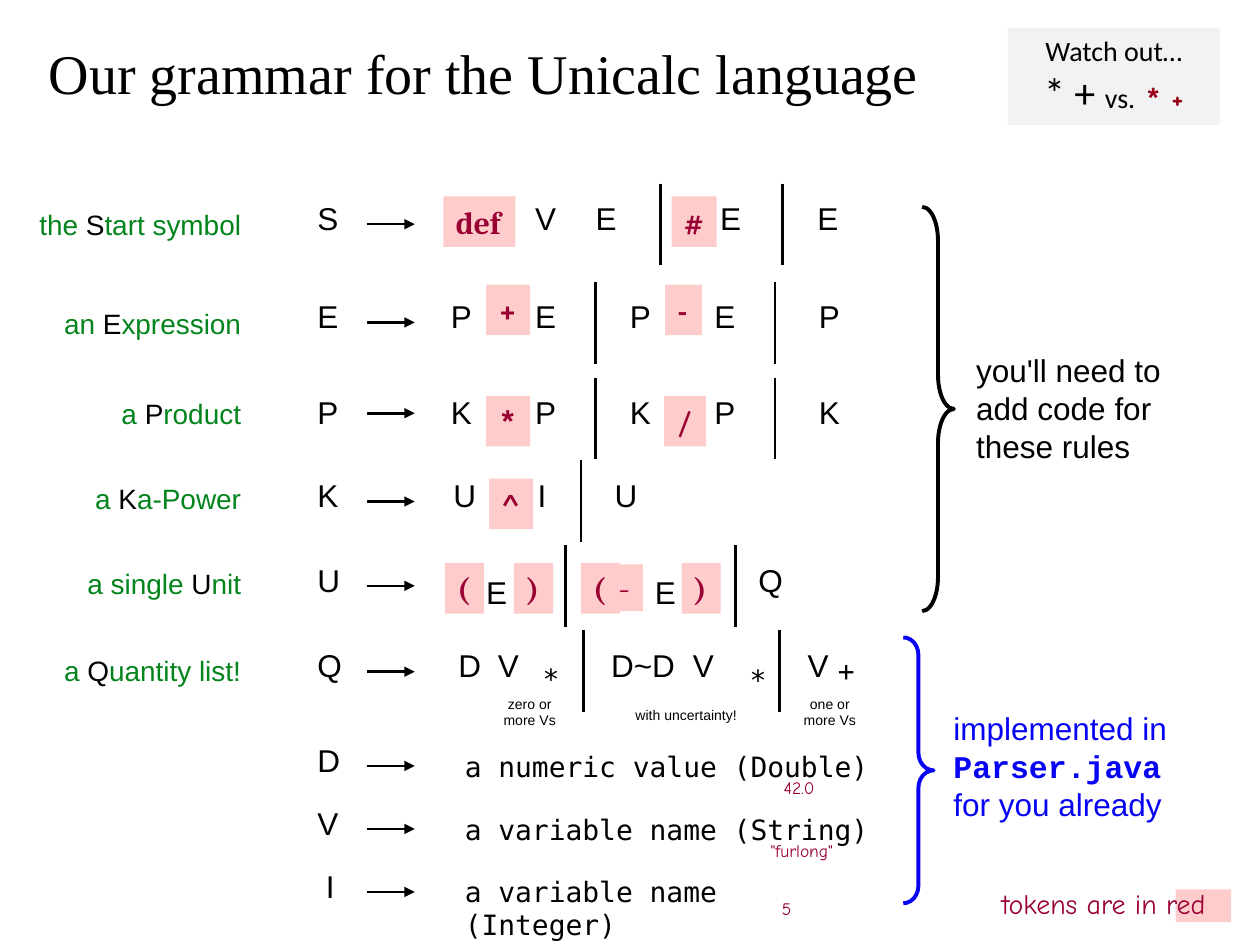
from lxml import etree
from pptx import Presentation
from pptx import util as u
from pptx.dml.color import RGBColor
from pptx.enum import shapes, text
from pptx.oxml.ns import qn

INK, RED, PINK, GREEN, BLUE = "000000", "990033", "FFCCCC", "04841C", "0703F3"
SANS, MONO, COMIC = "Arial", "DejaVu Sans Mono", "Comic Neue"
LEFT, MID, RIGHT = text.PP_ALIGN.LEFT, text.PP_ALIGN.CENTER, text.PP_ALIGN.RIGHT

deck = Presentation()
deck.slide_width, deck.slide_height = u.Cm(25.4), u.Cm(19.05)
page = deck.slides.add_slide(deck.slide_layouts[6])


def put(x, y, w, h, runs, align=LEFT, wrap=False, fill=None):
    """Add a text box, or a filled box; a run is (text, size, font, colour, bold).

    A run that is None starts a new paragraph.
    """
    area = [u.Cm(n) for n in (x, y, w, h)]
    if fill:
        box = page.shapes.add_shape(shapes.MSO_SHAPE.RECTANGLE, *area)
        box.shadow.inherit = False
        box.fill.solid()
        box.fill.fore_color.rgb = RGBColor.from_string(fill)
        box.line.fill.background()
    else:
        box = page.shapes.add_textbox(*area)
    frame = box.text_frame
    frame.word_wrap = wrap
    frame.vertical_anchor = text.MSO_ANCHOR.TOP
    para = frame.paragraphs[0]
    para.alignment = align
    for item in runs:
        if item is None:
            para = frame.add_paragraph()
            para.alignment = align
            continue
        words, size, face, ink, bold = item
        run = para.add_run()
        run.text = words
        run.font.size = u.Pt(size)
        run.font.name = face
        run.font.bold = bold
        run.font.color.rgb = RGBColor.from_string(ink)
    return box


def rule(x1, y1, x2, y2, arrow=False):
    line = page.shapes.add_connector(
        shapes.MSO_CONNECTOR.STRAIGHT, *[u.Cm(n) for n in (x1, y1, x2, y2)])
    line.line.width = u.Pt(1.5)
    line.line.color.rgb = RGBColor.from_string(INK)
    if arrow:
        etree.SubElement(line.line._get_or_add_ln(), qn("a:tailEnd"), type="triangle")
    etree.SubElement(line._element.spPr, qn("a:effectLst"))


# Title, red swatch and warning box
put(23.7, 17.93, 1.12, 0.66, [], fill=PINK)
put(0.41, 0.66, 18.69, 1.63,
    [("Our grammar for the Unicalc language", 32, "Times New Roman", INK, False)],
    MID, True)
warn = put(20.32, 0.56, 4.27, 1.96, [
    ("Watch out…", 16, "Calibri", INK, False), None,
    ("* + ", 24, "Calibri", INK, False), ("vs.", 16, "Calibri", INK, False),
    (" ", 24, "Calibri", INK, False), ("*", 16, "Courier New", "960117", True),
    (" +", 16, COMIC, "960117", True)], MID, True, "F2F2F2")
last = warn.text_frame.paragraphs[1]
last.line_spacing = 0.5
last.space_before = u.Pt(12)

# Rules: symbol, letter top, arrow height, label top, label parts, bars, letters
rows = [
    ("S", 3.89, 4.52, 4.06, ("the ", "S", "tart symbol"), (13.31, 15.77),
     [("V", 10.54), ("E", 11.76), ("E", 14.27), ("E", 16.23)]),
    ("E", 5.87, 6.5, 6.05, ("an ", "E", "xpression"), (12.01, 15.62),
     [("P", 8.84), ("E", 10.54), ("P", 12.45), ("E", 14.15), ("P", 16.26)]),
    ("P", 7.8, 8.33, 7.87, ("a ", "P", "roduct"), (12.01, 15.62),
     [("K", 8.84), ("P", 10.54), ("K", 12.45), ("P", 14.15), ("K", 16.26)]),
    ("K", 9.47, 10.11, 9.58, ("a ", "K", "a-Power"), (11.71,),
     [("U", 8.89), ("I", 10.59), ("U", 12.14)]),
    ("U", 11.18, 11.81, 11.3, ("a single ", "U", "nit"), (11.4, 14.83),
     [("Q", 15.04)]),
    ("Q", 12.9, 13.54, 13.06, ("a ", "Q", "uantity list!"), (11.76, 15.72),
     [("D", 8.99), ("V", 9.79), ("D~D", 12.07), ("V", 13.72), ("V", 16.03)]),
    ("D", 14.81, 15.44, 0, (), (), []),
    ("V", 16.08, 16.71, 0, (), (), []),
    ("I", 17.35, 17.98, 0, (), (), []),
]
for name, top, mid, high, label, bars, parts in rows:
    start = 6.32 if name == "I" else 6.15
    for sign, x in [(name, start)] + parts:
        wide = 1.8 if sign == "D~D" else 1.15
        put(x, top, wide, 1.27, [(sign, 18, SANS, INK, False)])
    rule(7.39, mid, 8.36, mid, True)
    for x in bars:
        rule(x, top - 0.19, x, top + 1.46)
    if label:
        inks = (GREEN, INK, GREEN)
        put(0.41, high, 4.7, 0.94,
            [(part, 16, SANS, ink, False) for part, ink in zip(label, inks)],
            RIGHT, True)
for x in (9.55, 12.95):
    put(x, 11.43, 1.07, 1.27, [("E", 18, SANS, INK, False)])

# Tokens on pink
tokens = [
    ("def", 8.94, 3.96, 1.45), ("#", 13.54, 3.96, 0.91),
    ("+", 9.8, 5.74, 0.89), ("-", 13.41, 5.74, 0.74),
    ("*", 9.8, 7.98, 0.89), ("/", 13.39, 7.98, 0.84),
    ("^", 9.86, 9.65, 0.89),
    ("(", 8.97, 11.35, 0.79), (")", 10.36, 11.35, 0.79),
    ("(", 11.71, 11.35, 0.79), (")", 13.74, 11.35, 0.79),
]
for sign, x, y, w in tokens:
    face = "Courier New" if sign == "*" else "Cambria"
    put(x, y, w, 1.02, [(sign, 18, face, RED, True)], fill=PINK)
put(12.22, 11.38, 0.74, 0.94, [("-", 16, COMIC, RED, False)], fill=PINK)

# Repeat marks and their notes
for sign, x, y in [("*", 10.69, 13.21), ("*", 14.86, 13.23), ("+", 16.64, 13.06)]:
    put(x, y, 0.86, 0.94, [(sign, 16, MONO, INK, False)])
for note, x, y, w in [("zero or more Vs", 9.83, 13.89, 1.7),
                      ("with uncertainty!", 12.22, 14.12, 3.23),
                      ("one or more Vs", 15.88, 13.89, 1.7)]:
    put(x, y, w, 0.94, [(note, 8, SANS, INK, False)], MID, True)

# Meanings of the last three symbols, each with a sample
for words, y, w, wrap in [("a numeric value (Double)", 14.99, 8.64, False),
                          ("a variable name (String)", 16.26, 8.64, False),
                          ("a variable name (Integer)", 17.5, 6.88, True)]:
    put(9.12, y, w, 0.94, [(words, 16, MONO, INK, False)], wrap=wrap)
for words, x, y, w in [("42.0", 15.49, 15.54, 1.24), ('"furlong"', 15.16, 16.81, 2.01),
                       ("5", 15.49, 17.98, 0.74)]:
    put(x, y, w, 0.69, [(words, 10, COMIC, RED, False)], MID)
put(19.94, 17.75, 5, 0.94, [("tokens are in red", 16, COMIC, RED, False)])

# Braces and remarks
for x, y, w, h, bend, ink in [(18.59, 4.17, 0.64, 8.15, 1.07, INK),
                              (18.21, 12.85, 0.61, 5.36, 0.58, BLUE)]:
    brace = page.shapes.add_shape(
        shapes.MSO_SHAPE.RIGHT_BRACE, *[u.Cm(n) for n in (x, y, w, h)])
    brace.shadow.inherit = False
    brace.adjustments[0] = bend
    brace.fill.background()
    brace.line.width = u.Pt(2.25)
    brace.line.color.rgb = RGBColor.from_string(ink)
put(19.43, 6.96, 5.08, 2.54,
    [("you'll need to add code for these rules", 18, SANS, INK, False)], wrap=True)
put(18.97, 14.17, 5.08, 2.54, [
    ("implemented in ", 18, SANS, BLUE, False),
    ("Parser.java", 18, "Courier New", BLUE, True),
    (" for you already", 18, SANS, BLUE, False)], wrap=True)

deck.save("out.pptx")
